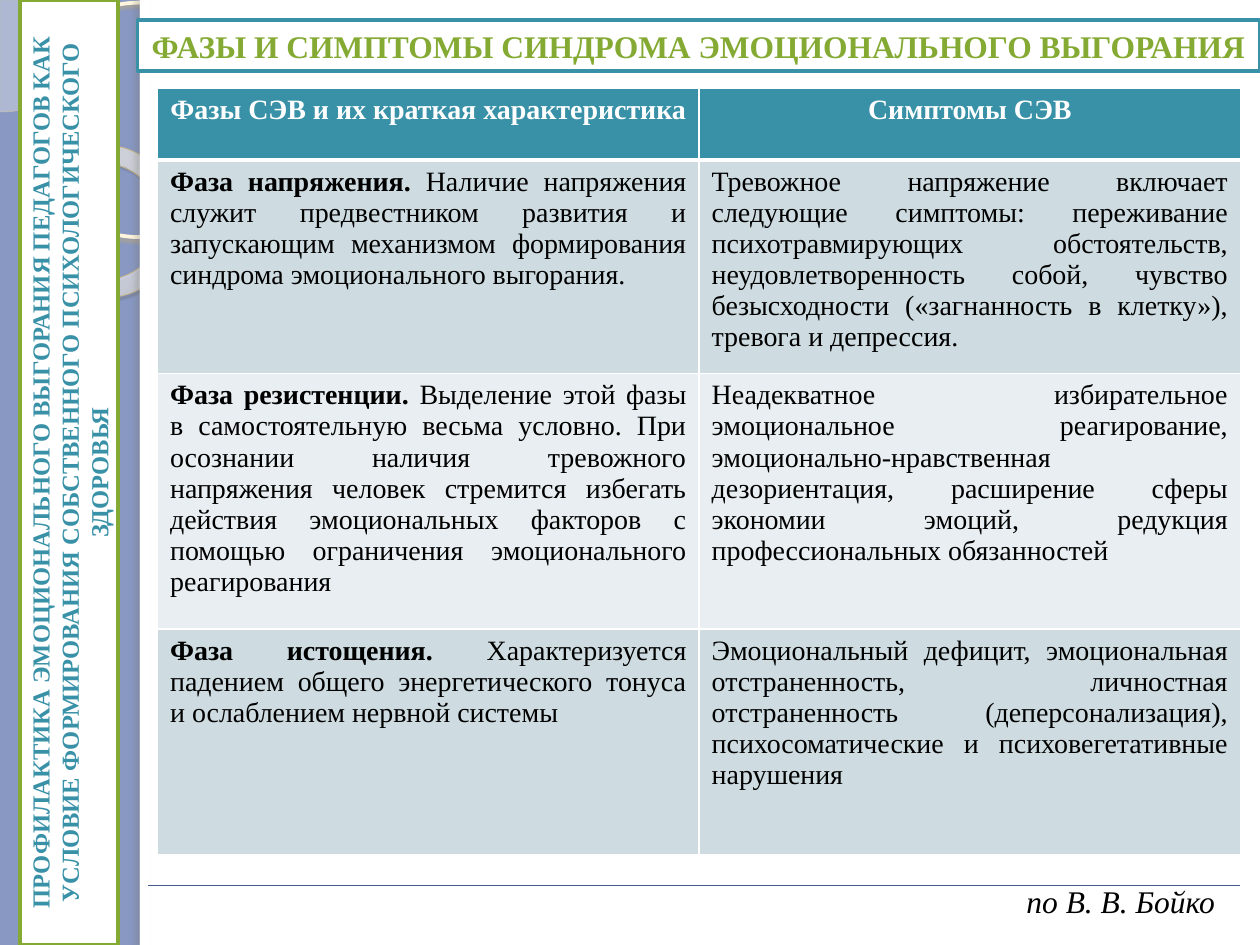
from dataclasses import dataclass

from lxml import etree
from pptx import Presentation
from pptx.dml.color import RGBColor
from pptx.enum.shapes import MSO_CONNECTOR, MSO_SHAPE
from pptx.enum.text import MSO_ANCHOR, MSO_AUTO_SIZE, PP_ALIGN
from pptx.oxml.ns import qn
from pptx.util import Pt

RECTANGLE, OVAL = MSO_SHAPE.RECTANGLE, MSO_SHAPE.OVAL
DONUT, PIE = MSO_SHAPE.DONUT, MSO_SHAPE.PIE
STRAIGHT = MSO_CONNECTOR.STRAIGHT
LEFT, CENTER, JUSTIFY = PP_ALIGN.LEFT, PP_ALIGN.CENTER, PP_ALIGN.JUSTIFY
MIDDLE, NO_AUTOFIT = MSO_ANCHOR.MIDDLE, MSO_AUTO_SIZE.NONE


@dataclass(frozen=True)
class Theme:
    font: str = "Times New Roman"
    background: str = "8898C3"
    white: str = "FFFFFF"
    black: str = "000000"
    teal: str = "3891A7"
    green: str = "84AA33"
    rule: str = "475A8D"
    bands: tuple = ("CEDCE1", "E8EEF1")
    pie: str = "FEFAF4"
    pie_line: str = "D3C39F"
    ring: str = "FFF5DE"
    ring_shadow: str = "B0A68F"
    donut_line: str = "C7B893"
    donut_shadow: str = "5A5444"
    donut_stops: tuple = ((0, "FFFCF6", 70), (70, "FFFEFB", 55), (100, "F0D28E", 60))
    panel_shadow: str = "736F63"
    title_size: int = 14
    heading_size: int = 18
    table_size: int = 16


def add_color(parent, color, alpha=100):
    element = etree.SubElement(parent, qn("a:srgbClr"), val=color)
    if alpha < 100:
        etree.SubElement(element, qn("a:alpha"), val=str(alpha * 1000))


class SlideBuilder:
    def __init__(self, presentation, theme):
        self.theme = theme
        self.slide = presentation.slides.add_slide(presentation.slide_layouts[5])
        self.paint(self.slide.background.fill, theme.background)

    def paint(self, fill, color):
        fill.solid()
        fill.fore_color.rgb = RGBColor.from_string(color)

    def outline(self, line, color, width):
        self.paint(line.fill, color)
        line.width = Pt(width)

    def add_runs(self, paragraph, runs, size, color, align):
        paragraph.alignment = align
        for text, bold, italic in runs:
            run = paragraph.add_run()
            run.text = text
            font = run.font
            font.name, font.size = self.theme.font, Pt(size)
            font.bold, font.italic = bold, italic
            font.color.rgb = RGBColor.from_string(color)

    def shape(self, kind, box, fill=None, line=None, shadow=None):
        shape = self.slide.shapes.add_shape(kind, *map(Pt, box))
        shape.shadow.inherit = False
        if fill:
            self.paint(shape.fill, fill)
        else:
            shape.fill.background()
        if line:
            self.outline(shape.line, *line)
        else:
            shape.line.fill.background()
        if shadow:
            self.cast_shadow(shape, *shadow)
        return shape

    def cast_shadow(self, shape, color, alpha, blur, distance, angle):
        effects = shape._element.spPr.find(qn("a:effectLst"))
        outer = etree.SubElement(
            effects, qn("a:outerShdw"), blurRad=str(Pt(blur)), dist=str(Pt(distance)),
            dir=str(angle * 60000), algn="tl", rotWithShape="0")
        add_color(outer, color, alpha)

    def set_alpha(self, shape, alpha):
        color = shape._element.spPr.find(qn("a:solidFill"))[0]
        etree.SubElement(color, qn("a:alpha"), val=str(alpha * 1000))

    def radial_fill(self, shape, stops, focus):
        properties = shape._element.spPr
        gradient = etree.Element(qn("a:gradFill"), rotWithShape="1")
        stop_list = etree.SubElement(gradient, qn("a:gsLst"))
        for position, color, alpha in stops:
            stop = etree.SubElement(stop_list, qn("a:gs"), pos=str(position * 1000))
            add_color(stop, color, alpha)
        circle = etree.SubElement(gradient, qn("a:path"))
        circle.set("path", "circle")
        sides = {side: str(value * 1000) for side, value in zip("ltrb", focus)}
        etree.SubElement(circle, qn("a:fillToRect"), **sides)
        properties.replace(properties.find(qn("a:noFill")), gradient)

    def title(self, text, box):
        title = self.slide.shapes.title
        title._element.getparent().append(title._element)
        title.left, title.top, title.width, title.height = map(Pt, box)
        title.rotation = 270
        self.paint(title.fill, self.theme.white)
        self.outline(title.line, self.theme.green, 2)
        frame = title.text_frame
        frame.auto_size, frame.vertical_anchor = NO_AUTOFIT, MIDDLE
        self.add_runs(frame.paragraphs[0], [(text, True, False)],
                      self.theme.title_size, self.theme.teal, CENTER)

    def heading(self, text, box):
        shape = self.shape(RECTANGLE, box, self.theme.white, (self.theme.teal, 2))
        shape.text_frame.word_wrap = False
        self.add_runs(shape.text_frame.paragraphs[0], [(text, True, False)],
                      self.theme.heading_size, self.theme.green, CENTER)

    def caption(self, text, box):
        frame = self.slide.shapes.add_textbox(*map(Pt, box)).text_frame
        frame.word_wrap = False
        self.add_runs(frame.paragraphs[0], [(text, False, True)],
                      self.theme.heading_size, self.theme.black, LEFT)

    def rule(self, left, right, top):
        line = self.slide.shapes.add_connector(STRAIGHT, Pt(left), Pt(top), Pt(right), Pt(top))
        self.outline(line.line, self.theme.rule, 0.75)
        etree.SubElement(line._element.spPr, qn("a:effectLst"))

    def cell_borders(self, cell, widths):
        properties = cell._tc.get_or_add_tcPr()
        for index, (side, width) in enumerate(zip("LRTB", widths)):
            border = etree.Element(qn(f"a:ln{side}"), w=str(Pt(width)))
            add_color(etree.SubElement(border, qn("a:solidFill")), self.theme.white)
            properties.insert(index, border)

    def table(self, rows, left, top, width, heights):
        theme = self.theme
        columns = len(rows[0])
        table = self.slide.shapes.add_table(
            len(rows), columns, Pt(left), Pt(top), Pt(width), Pt(sum(heights))).table
        table.horz_banding = False
        for column in table.columns:
            column.width = Pt(width / columns)
        for r, (row, height) in enumerate(zip(rows, heights)):
            table.rows[r].height = Pt(height)
            header = r == 0
            fill = theme.teal if header else theme.bands[(r - 1) % 2]
            for c, runs in enumerate(row):
                cell = table.cell(r, c)
                self.paint(cell.fill, fill)
                self.cell_borders(cell, (1, 1, 3 if r == 1 else 1, 3 if header else 1))
                self.add_runs(cell.text_frame.paragraphs[0], runs, theme.table_size,
                              theme.white if header else theme.black,
                              CENTER if header else JUSTIFY)


HEADERS = ("Фазы СЭВ и их краткая характеристика", "Симптомы СЭВ")
PHASES = (
    ("Фаза напряжения. ",
     "Наличие напряжения служит предвестником развития и запускающим механизмом "
     "формирования синдрома эмоционального выгорания. ",
     "Тревожное напряжение включает следующие симптомы: переживание психотравмирующих "
     "обстоятельств, неудовлетворенность собой, чувство безысходности («загнанность в "
     "клетку»), тревога и депрессия."),
    ("Фаза резистенции. ",
     "Выделение этой фазы в самостоятельную весьма условно. При осознании наличия "
     "тревожного напряжения человек стремится избегать действия эмоциональных факторов "
     "с помощью ограничения эмоционального реагирования",
     "Неадекватное избирательное эмоциональное реагирование, эмоционально-нравственная "
     "дезориентация, расширение сферы экономии эмоций, редукция профессиональных обязанностей"),
    ("Фаза истощения. ",
     "Характеризуется падением общего энергетического тонуса и ослаблением нервной системы",
     "Эмоциональный дефицит, эмоциональная отстраненность, личностная отстраненность "
     "(деперсонализация), психосоматические и психовегетативные нарушения"),
)


def main():
    theme = Theme()
    presentation = Presentation()
    presentation.slide_width, presentation.slide_height = Pt(720), Pt(540)
    builder = SlideBuilder(presentation, theme)

    pie = builder.shape(PIE, (-64, -64, 128, 128), theme.pie, (theme.pie_line, 0.25))
    pie.adjustments[0], pie.adjustments[1] = 0, 54
    builder.set_alpha(pie, 33)
    builder.shape(OVAL, (13, 1.5, 134, 134), None, (theme.ring, 2.15),
                  (theme.ring_shadow, 85, 2, 2, 90))
    donut = builder.shape(DONUT, (14.5, 83, 88.5, 87), None, (theme.donut_line, 0.58),
                          (theme.donut_shadow, 35, 1, 1.2, 75))
    donut.adjustments[0] = 0.12
    donut.rotation = 38.6
    builder.radial_fill(donut, theme.donut_stops, (-408, -50, 508, 150))
    builder.shape(RECTANGLE, (80, 0, 640, 540), theme.white)
    builder.shape(RECTANGLE, (80, 0, 6, 540), theme.white,
                  shadow=(theme.panel_shadow, 25, 3, 3, 180))

    builder.title("ПРОФИЛАКТИКА ЭМОЦИОНАЛЬНОГО ВЫГОРАНИЯ ПЕДАГОГОВ КАК УСЛОВИЕ "
                  "ФОРМИРОВАНИЯ СОБСТВЕННОГО ПСИХОЛОГИЧЕСКОГО ЗДОРОВЬЯ", (-230.5, 242, 540, 56))
    builder.heading("ФАЗЫ И СИМПТОМЫ СИНДРОМА ЭМОЦИОНАЛЬНОГО ВЫГОРАНИЯ", (78.5, 11.5, 641.5, 29))
    rows = [[[(header, True, False)] for header in HEADERS]]
    rows += [[[(phase, True, False), (description, False, False)], [(symptoms, False, False)]]
             for phase, description, symptoms in PHASES]
    builder.table(rows, 90, 50.5, 619, (41, 122, 146, 129))
    builder.caption("по В. В. Бойко", (579.5, 500.5, 124.5, 29))
    builder.rule(84.5, 708.5, 506)
    presentation.save("out.pptx")


if __name__ == "__main__":
    main()
